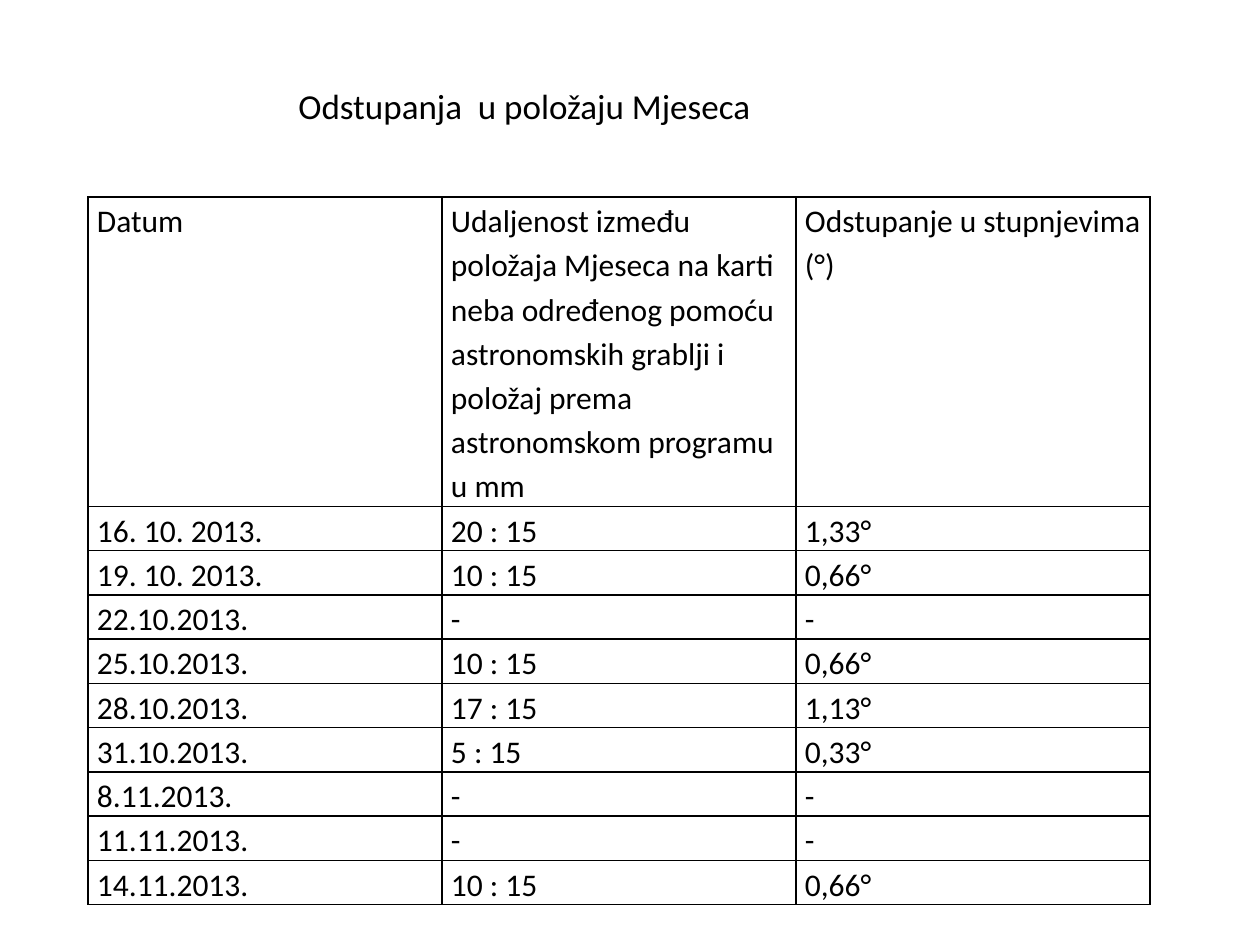
from dataclasses import dataclass

from lxml.etree import SubElement
from pptx import Presentation
from pptx.dml.color import RGBColor
from pptx.oxml.ns import qn
from pptx.slide import Slide
from pptx.table import _Cell
from pptx.text.text import _Paragraph
from pptx.util import Emu, Pt

PIXELS_PER_INCH = 126
BLACK = RGBColor(0, 0, 0)
WHITE = RGBColor(255, 255, 255)
FONT = "Calibri"
BORDER_SIDES = ("a:lnL", "a:lnR", "a:lnT", "a:lnB")

TABLE_LEFT, TABLE_TOP = 88, 197
COLUMN_WIDTH = 354
HEADER_HEIGHT, ROW_HEIGHT = 266, 38
CELL_MARGIN = 9


@dataclass(frozen=True)
class Measurement:
    date: str
    distance: str
    deviation: str


HEADER = Measurement(
    "Datum",
    "Udaljenost između položaja Mjeseca na karti neba određenog pomoću "
    "astronomskih grablji i položaj prema astronomskom programu u mm",
    "Odstupanje u stupnjevima (°)",
)
MEASUREMENTS = [
    Measurement("16. 10. 2013.", "20 : 15", "1,33°"),
    Measurement("19. 10. 2013.", "10 : 15", "0,66°"),
    Measurement("22.10.2013.", "-", "-"),
    Measurement("25.10.2013.", "10 : 15", "0,66°"),
    Measurement("28.10.2013.", "17 : 15", "1,13°"),
    Measurement("31.10.2013.", "5 : 15", "0,33°"),
    Measurement("8.11.2013.", "-", "-"),
    Measurement("11.11.2013.", "-", "-"),
    Measurement("14.11.2013.", "10 : 15", "0,66°"),
]


def px(length: int) -> Emu:
    return Emu(round(length * 914400 / PIXELS_PER_INCH))


def format_runs(paragraph: _Paragraph, size: int) -> None:
    for run in paragraph.runs:
        run.font.name = FONT
        run.font.size = Pt(size)
        run.font.bold = False
        run.font.color.rgb = BLACK


def add_borders(cell: _Cell) -> None:
    properties = cell._tc.get_or_add_tcPr()
    for position, side in enumerate(BORDER_SIDES):
        line = SubElement(properties, qn(side), w=str(Pt(1)))
        fill = SubElement(line, qn("a:solidFill"))
        SubElement(fill, qn("a:srgbClr"), val=str(BLACK))
        properties.insert(position, line)


def fill_cell(cell: _Cell, text: str) -> None:
    cell.margin_left = cell.margin_right = px(CELL_MARGIN)
    cell.margin_top = cell.margin_bottom = 0
    cell.fill.solid()
    cell.fill.fore_color.rgb = WHITE
    add_borders(cell)
    cell.text_frame.text = text
    paragraph = cell.text_frame.paragraphs[0]
    paragraph.line_spacing = 1.15
    format_runs(paragraph, 18)


def add_title(slide: Slide, text: str) -> None:
    shape = slide.shapes.add_textbox(px(286), px(78), px(620), px(55))
    shape.text_frame.word_wrap = True
    shape.text_frame.text = text
    format_runs(shape.text_frame.paragraphs[0], 20)


def add_measurement_table(slide: Slide) -> None:
    records = [HEADER, *MEASUREMENTS]
    height = HEADER_HEIGHT + ROW_HEIGHT * len(MEASUREMENTS)
    table = slide.shapes.add_table(
        len(records), 3, px(TABLE_LEFT), px(TABLE_TOP), px(3 * COLUMN_WIDTH), px(height)
    ).table
    for column in table.columns:
        column.width = px(COLUMN_WIDTH)
    for row, record in zip(table.rows, records):
        row.height = px(HEADER_HEIGHT if record is HEADER else ROW_HEIGHT)
        texts = (record.date, record.distance, record.deviation)
        for cell, text in zip(row.cells, texts):
            fill_cell(cell, text)


def main() -> None:
    presentation = Presentation()
    presentation.slide_width = px(1260)
    presentation.slide_height = px(945)
    slide = presentation.slides.add_slide(presentation.slide_layouts[6])
    add_measurement_table(slide)
    add_title(slide, "Odstupanja  u položaju Mjeseca")
    presentation.save("out.pptx")


if __name__ == "__main__":
    main()
